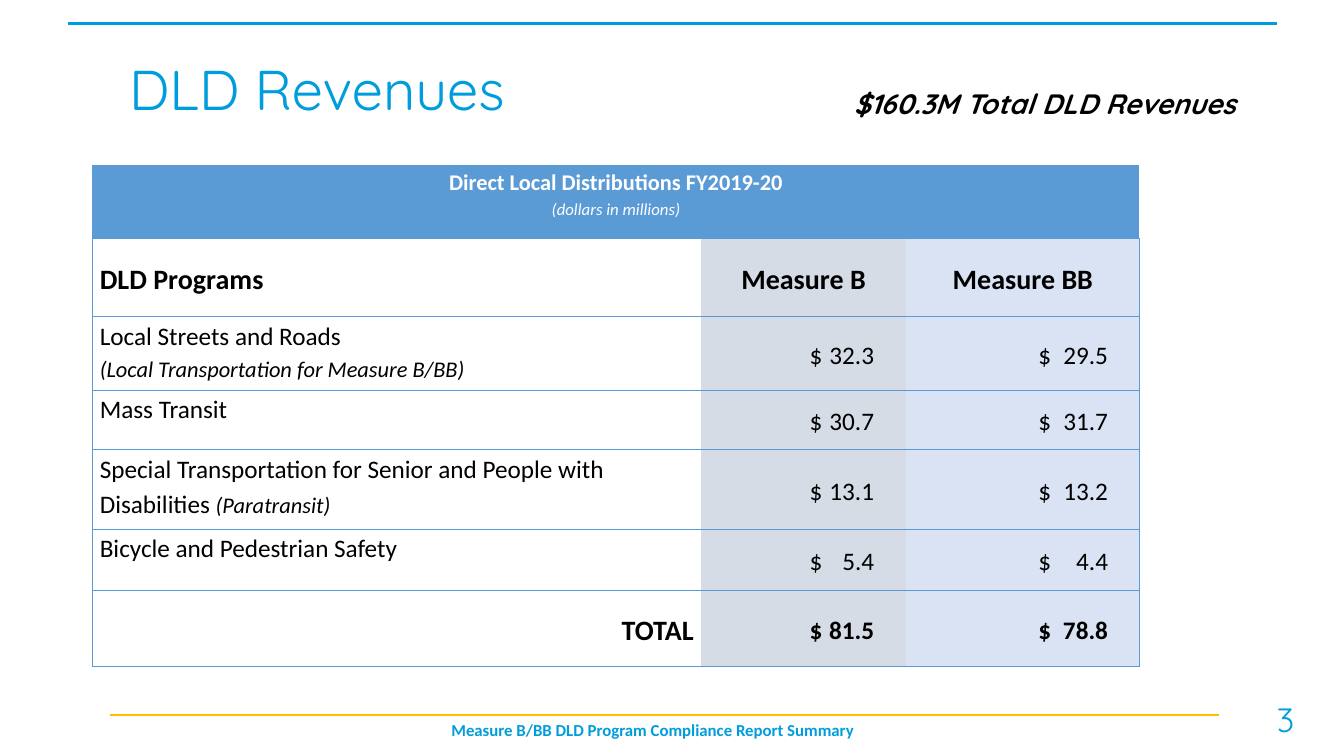
from dataclasses import dataclass

from lxml.etree import SubElement
from pptx import Presentation
from pptx.dml.color import RGBColor
from pptx.enum.shapes import MSO_CONNECTOR
from pptx.enum.text import MSO_ANCHOR, PP_ALIGN
from pptx.oxml.ns import qn
from pptx.util import Inches, Pt

CYAN = RGBColor(0x00, 0x9D, 0xDC)
GOLD = RGBColor(0xFF, 0xC0, 0x00)
BLUE = RGBColor(0x5B, 0x9B, 0xD5)
GREY = RGBColor(0xD6, 0xDC, 0xE5)
PALE_BLUE = RGBColor(0xDA, 0xE3, 0xF3)
WHITE = RGBColor(0xFF, 0xFF, 0xFF)
BLACK = RGBColor(0x00, 0x00, 0x00)

COLUMN_WIDTHS = (6.03, 2.04, 2.31)
ROW_HEIGHTS = (0.72, 0.78, 0.73, 0.59, 0.79, 0.61, 0.75)
COLUMN_FILLS = (WHITE, GREY, PALE_BLUE)
AMOUNT_INSETS = (1.08, 1.31)
AMOUNT_TABS = (0.64, 0.69)


@dataclass(frozen=True)
class Style:
    size: float
    color: RGBColor = BLACK
    font: str = "Calibri"
    bold: bool = False
    italic: bool = False


@dataclass(frozen=True)
class Label:
    text: str
    style: Style
    left: float
    top: float
    width: float
    height: float
    align: PP_ALIGN = PP_ALIGN.LEFT
    anchor: MSO_ANCHOR = MSO_ANCHOR.TOP


@dataclass(frozen=True)
class Rule:
    left: float
    right: float
    top: float
    color: RGBColor
    weight: float


@dataclass(frozen=True)
class Program:
    name: str
    amounts: tuple[str, str]
    detail: str = ""
    detail_on_new_line: bool = False


BODY = Style(18)
DETAIL = Style(16, italic=True)
HEADING = Style(20, bold=True)
TOTAL_AMOUNT = Style(18, bold=True)

RULES = (
    Rule(1.09, 12.09, 7.09, GOLD, 1.5),
    Rule(0.67, 12.67, 0.23, CYAN, 2.25),
)
LABELS = (
    Label("Measure B/BB DLD Program Compliance Report Summary", Style(12, CYAN, bold=True),
          2.7, 7.09, 7.55, 0.38, PP_ALIGN.CENTER),
    Label("3", Style(24, CYAN, "Quicksand"), 12.29, 6.88, 0.92, 0.5,
          PP_ALIGN.CENTER, MSO_ANCHOR.MIDDLE),
    Label("$160.3M Total DLD Revenues", Style(20, BLACK, "Quicksand", True, True),
          8.37, 0.81, 4.07, 0.44),
)
PROGRAMS = (
    Program("Local Streets and Roads", ("32.3", "29.5"),
            "(Local Transportation for Measure B/BB)", True),
    Program("Mass Transit", ("30.7", "31.7")),
    Program("Special Transportation for Senior and People with Disabilities ",
            ("13.1", "13.2"), "(Paratransit)"),
    Program("Bicycle and Pedestrian Safety", ("5.4", "4.4")),
)
TOTALS = ("81.5", "78.8")


def format_run(run, style: Style) -> None:
    run.font.size = Pt(style.size)
    run.font.name = style.font
    run.font.color.rgb = style.color
    run.font.bold = style.bold
    run.font.italic = style.italic


def write_paragraph(paragraph, text: str, style: Style, align: PP_ALIGN) -> None:
    paragraph.text = text
    paragraph.alignment = align
    for run in paragraph.runs:
        format_run(run, style)


def add_label(slide, label: Label) -> None:
    shape = slide.shapes.add_textbox(Inches(label.left), Inches(label.top),
                                     Inches(label.width), Inches(label.height))
    shape.text_frame.word_wrap = True
    shape.text_frame.vertical_anchor = label.anchor
    write_paragraph(shape.text_frame.paragraphs[0], label.text, label.style, label.align)


def add_rule(slide, rule: Rule) -> None:
    connector = slide.shapes.add_connector(
        MSO_CONNECTOR.STRAIGHT, Inches(rule.left), Inches(rule.top),
        Inches(rule.right), Inches(rule.top))
    connector.line.color.rgb = rule.color
    connector.line.width = Pt(rule.weight)
    SubElement(connector._element.spPr, qn("a:effectLst"))


def add_title(slide, text: str) -> None:
    title = slide.shapes.title
    title.left, title.top = Inches(1.18), Inches(0.19)
    title.width, title.height = Inches(11), Inches(1.45)
    title.text_frame.vertical_anchor = MSO_ANCHOR.MIDDLE
    paragraph = title.text_frame.paragraphs[0]
    write_paragraph(paragraph, text, Style(40, CYAN, "Quicksand"), PP_ALIGN.LEFT)
    paragraph.line_spacing = 0.9


def format_cell(cell, column: int, fill: RGBColor) -> None:
    properties = cell._tc.get_or_add_tcPr()
    visible = {"L": column == 0, "R": column == len(COLUMN_WIDTHS) - 1, "T": True, "B": True}
    for side, shown in visible.items():
        border = SubElement(properties, qn(f"a:ln{side}"), w=str(Pt(0.5)))
        if shown:
            solid = SubElement(border, qn("a:solidFill"))
            SubElement(solid, qn("a:srgbClr"), val=str(BLUE))
        else:
            SubElement(border, qn("a:noFill"))
    cell.fill.solid()
    cell.fill.fore_color.rgb = fill
    cell.margin_left = cell.margin_right = Inches(0.07)
    cell.margin_top = cell.margin_bottom = 0


def write_cell(cell, text: str, style: Style, align: PP_ALIGN = PP_ALIGN.LEFT,
               anchor: MSO_ANCHOR = MSO_ANCHOR.MIDDLE) -> None:
    cell.vertical_anchor = anchor
    write_paragraph(cell.text_frame.paragraphs[0], text, style, align)


def write_amounts(table, row: int, amounts: tuple[str, str], style: Style) -> None:
    for column, (amount, inset, stop) in enumerate(zip(amounts, AMOUNT_INSETS, AMOUNT_TABS), 1):
        cell = table.cell(row, column)
        cell.margin_left = Inches(inset)
        properties = cell.text_frame.paragraphs[0]._p.get_or_add_pPr()
        tabs = SubElement(properties, qn("a:tabLst"))
        SubElement(tabs, qn("a:tab"), pos=str(Inches(stop)), algn="r")
        write_cell(cell, f"$\t{amount}", style)


def add_revenue_table(slide) -> None:
    table = slide.shapes.add_table(
        len(ROW_HEIGHTS), len(COLUMN_WIDTHS), Inches(0.92), Inches(1.64),
        Inches(sum(COLUMN_WIDTHS)), Inches(sum(ROW_HEIGHTS))).table
    table.first_row = table.horz_banding = False
    for column, width in zip(table.columns, COLUMN_WIDTHS):
        column.width = Inches(width)
    for row_index, height in enumerate(ROW_HEIGHTS):
        table.rows[row_index].height = Inches(height)
        for column_index, fill in enumerate(COLUMN_FILLS):
            format_cell(table.cell(row_index, column_index), column_index,
                        fill if row_index else BLUE)

    banner = table.cell(0, 0)
    banner.merge(table.cell(0, 2))
    write_cell(banner, "Direct Local Distributions FY2019-20", Style(16, WHITE, bold=True),
               PP_ALIGN.CENTER, MSO_ANCHOR.TOP)
    write_paragraph(banner.text_frame.add_paragraph(), "(dollars in millions)",
                    Style(12, WHITE, italic=True), PP_ALIGN.CENTER)

    write_cell(table.cell(1, 0), "DLD Programs", HEADING)
    for column, measure in enumerate(("Measure B", "Measure BB"), 1):
        write_cell(table.cell(1, column), measure, HEADING, PP_ALIGN.CENTER)

    for row, program in enumerate(PROGRAMS, 2):
        cell = table.cell(row, 0)
        write_cell(cell, program.name, BODY, anchor=MSO_ANCHOR.TOP)
        if program.detail_on_new_line:
            write_paragraph(cell.text_frame.add_paragraph(), program.detail, DETAIL, PP_ALIGN.LEFT)
        elif program.detail:
            run = cell.text_frame.paragraphs[0].add_run()
            run.text = program.detail
            format_run(run, DETAIL)
        write_amounts(table, row, program.amounts, BODY)

    total_row = len(ROW_HEIGHTS) - 1
    write_cell(table.cell(total_row, 0), "TOTAL", HEADING, PP_ALIGN.RIGHT)
    write_amounts(table, total_row, TOTALS, TOTAL_AMOUNT)
    for cell in table.iter_cells():
        for paragraph in cell.text_frame.paragraphs:
            paragraph.line_spacing = 1.15


def main() -> None:
    presentation = Presentation()
    presentation.slide_width, presentation.slide_height = Inches(13.33), Inches(7.5)
    slide = presentation.slides.add_slide(presentation.slide_layouts[5])
    for rule in RULES:
        add_rule(slide, rule)
    add_revenue_table(slide)
    for label in LABELS:
        add_label(slide, label)
    add_title(slide, "DLD Revenues")
    presentation.save("out.pptx")


if __name__ == "__main__":
    main()
